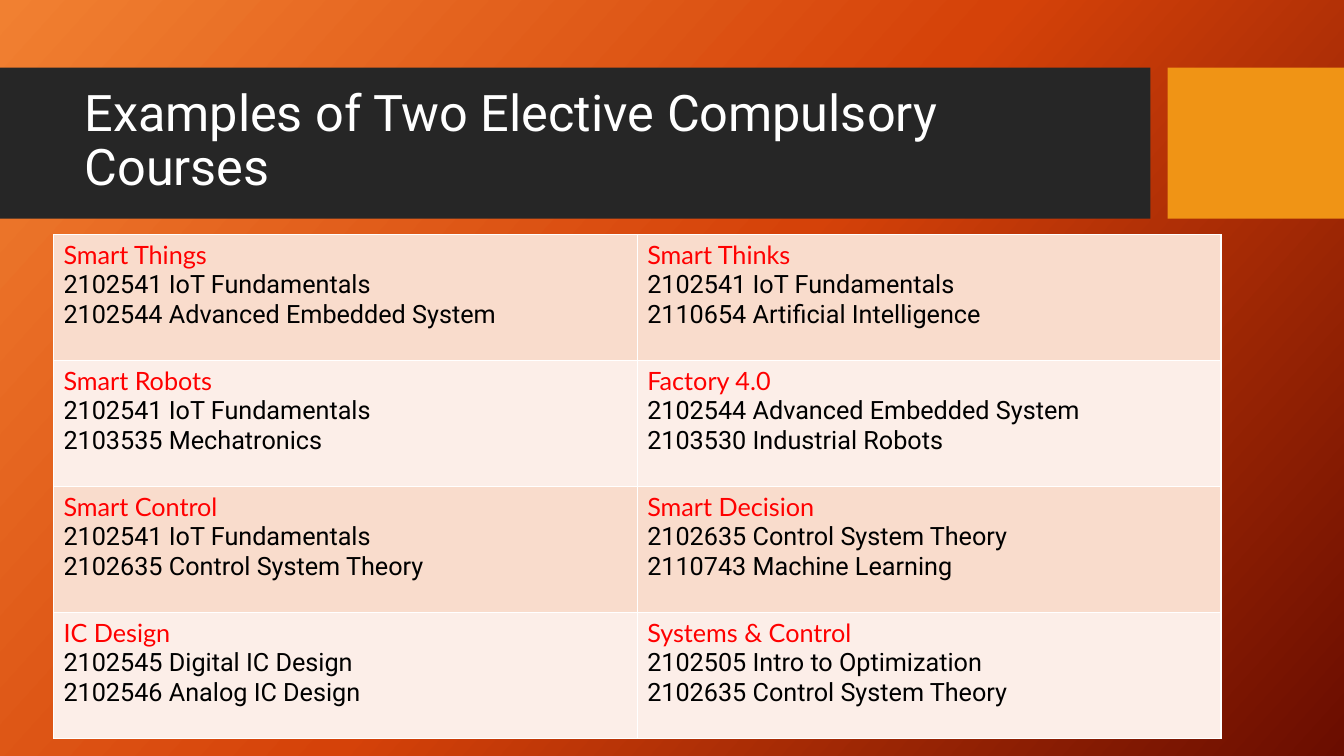
from copy import deepcopy

from lxml.etree import SubElement
from pptx import Presentation
from pptx.dml.color import RGBColor
from pptx.enum.shapes import MSO_SHAPE
from pptx.enum.text import MSO_ANCHOR
from pptx.oxml.ns import qn
from pptx.util import Inches, Pt

WHITE = RGBColor(0xFF, 0xFF, 0xFF)
BLACK = RGBColor(0x00, 0x00, 0x00)
RED = RGBColor(0xFF, 0x00, 0x00)
DARK = RGBColor(0x26, 0x26, 0x26)
AMBER = RGBColor(0xF0, 0x94, 0x15)
BANDS = [RGBColor(0xF9, 0xDC, 0xCC), RGBColor(0xFC, 0xEE, 0xE8)]
GLOW = [
    (0, RGBColor(0xF1, 0x80, 0x31)),
    (0.5, RGBColor(0xD5, 0x42, 0x09)),
    (1, RGBColor(0x6A, 0x0D, 0x00)),
]

IOT = "2102541 IoT Fundamentals"
EMBED = "2102544 Advanced Embedded System"
THEORY = "2102635 Control System Theory"
COURSES = [
    [("Smart Things", IOT, EMBED),
     ("Smart Thinks", IOT, "2110654 Artificial Intelligence")],
    [("Smart Robots", IOT, "2103535 Mechatronics"),
     ("Factory 4.0", EMBED, "2103530 Industrial Robots")],
    [("Smart Control", IOT, THEORY),
     ("Smart Decision", THEORY, "2110743 Machine Learning")],
    [("IC Design", "2102545 Digital IC Design", "2102546 Analog IC Design"),
     ("Systems & Control", "2102505 Intro to Optimization", THEORY)],
]


def style(para, name, size, color):
    para.font.name = name
    para.font.size = Pt(size)
    para.font.color.rgb = color


deck = Presentation()
deck.slide_width = Inches(13.33)
deck.slide_height = Inches(7.5)
slide = deck.slides.add_slide(deck.slide_layouts[6])

# Background gradient with a third stop
fill = slide.background.fill
fill.gradient()
fill.gradient_angle = 360 - 42
stops = next(slide.element.iter(qn("a:gsLst")))
stops.append(deepcopy(stops[-1]))
for stop, (place, color) in zip(fill.gradient_stops, GLOW):
    stop.position = place
    stop.color.rgb = color

# Title bar and accent block
for left, width, color in [(0, 11.41, DARK), (11.58, 1.75, AMBER)]:
    bar = slide.shapes.add_shape(
        MSO_SHAPE.RECTANGLE, Inches(left), Inches(0.67), Inches(width), Inches(1.5))
    bar.shadow.inherit = False
    bar.fill.solid()
    bar.fill.fore_color.rgb = color
    bar.line.fill.background()

# Title
title = slide.shapes.add_textbox(
    Inches(0.74), Inches(0.82), Inches(10.51), Inches(1.18))
frame = title.text_frame
frame.word_wrap = True
frame.vertical_anchor = MSO_ANCHOR.MIDDLE
frame.text = "Examples of Two Elective Compulsory Courses"
frame.paragraphs[0].line_spacing = 0.9
style(frame.paragraphs[0], "Roboto", 36, WHITE)

# Course table
table = slide.shapes.add_table(
    4, 2, Inches(0.53), Inches(2.33), Inches(11.58), Inches(5)).table
table.first_row = False
for row in table.rows:
    row.height = Inches(1.25)
for r, groups in enumerate(COURSES):
    for c, lines in enumerate(groups):
        cell = table.cell(r, c)
        cell.text = "\n".join(lines)
        head, *rest = cell.text_frame.paragraphs
        style(head, "Lato", 18, RED)
        for para in rest:
            style(para, "Roboto", 18, BLACK)

        # White borders go ahead of the cell fill
        props = cell._tc.get_or_add_tcPr()
        for side in ("a:lnL", "a:lnR", "a:lnT", "a:lnB"):
            edge = SubElement(props, qn(side), w=str(Pt(1)))
            SubElement(SubElement(edge, qn("a:solidFill")),
                       qn("a:srgbClr"), val=str(WHITE))
        cell.fill.solid()
        cell.fill.fore_color.rgb = BANDS[r % 2]

deck.save("out.pptx")
